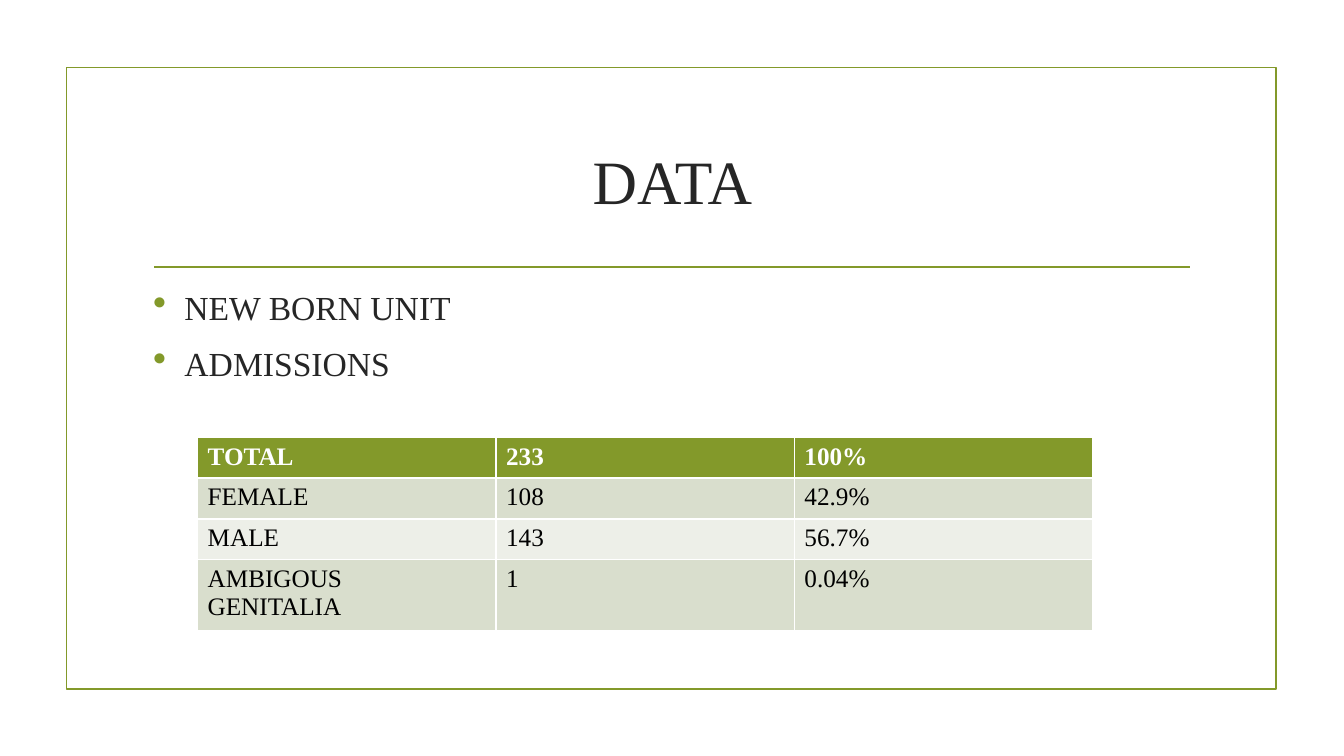
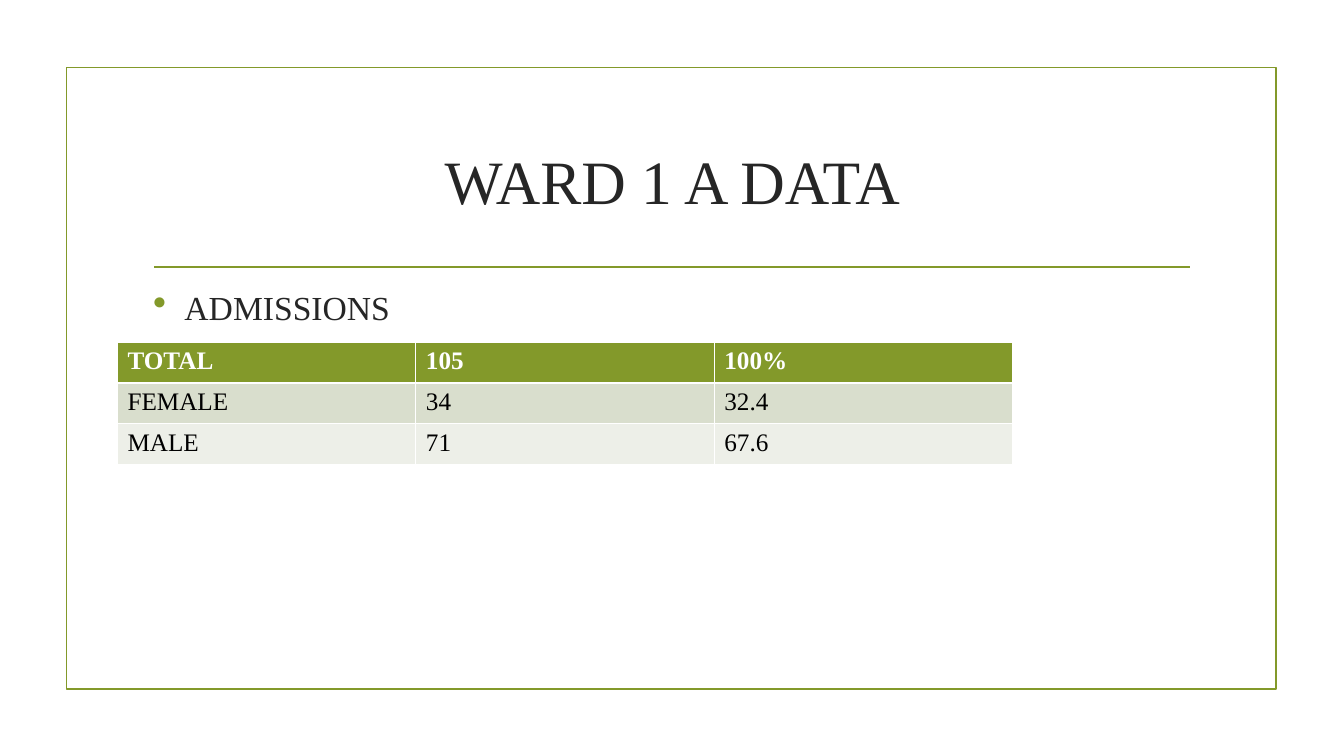
from lxml import etree
from pptx import Presentation
from pptx.dml.color import RGBColor
from pptx.enum import shapes, text
from pptx.oxml import ns
from pptx.util import Cm, Pt

# Shared style
FONT = "Times New Roman"
GREEN, INK, WHITE, BLACK = "83992A", "262626", "FFFFFF", "000000"
BANDS = ("D9DECD", "EDEFE8")
TITLE_ONLY = 5
COLUMN_WIDTH = 7.52
ROW_HEIGHT = 1.03


def color(hex_value):
    return RGBColor.from_string(hex_value)


def box(left, top, width, height):
    return Cm(left), Cm(top), Cm(width), Cm(height)


def set_font(paragraph, size, hex_value, bold=False):
    font = paragraph.font
    font.name, font.size, font.bold = FONT, Pt(size), bold
    font.color.rgb = color(hex_value)


def set_line(shape):
    shape.line.color.rgb = color(GREEN)
    shape.line.width = Pt(1.25)


def add_sub(parent, tag, **attributes):
    return etree.SubElement(parent, ns.qn(tag), attributes)


# Frame, rule and title common to every slide
def add_base_slide(presentation, title):
    slide = presentation.slides.add_slide(presentation.slide_layouts[TITLE_ONLY])

    frame = slide.shapes.add_shape(shapes.MSO_SHAPE.RECTANGLE, *box(1.68, 1.7, 30.48, 15.67))
    frame.shadow.inherit = False
    frame.fill.background()
    set_line(frame)

    rule = slide.shapes.add_connector(
        shapes.MSO_CONNECTOR.STRAIGHT, Cm(3.89), Cm(6.73), Cm(30), Cm(6.73))
    set_line(rule)
    add_sub(rule._element.spPr, "a:effectLst")

    heading = slide.shapes.title
    heading.left, heading.top, heading.width, heading.height = box(3.61, 2.72, 26.67, 3.63)
    heading.text_frame.text = title
    heading.text_frame.vertical_anchor = text.MSO_ANCHOR.MIDDLE
    paragraph = heading.text_frame.paragraphs[0]
    paragraph.alignment = text.PP_ALIGN.CENTER
    set_font(paragraph, 44, INK)
    return slide


def add_bullets(slide, items):
    frame = slide.shapes.add_textbox(*box(3.61, 7.11, 26.67, 9.22)).text_frame
    frame.word_wrap = True
    for index, item in enumerate(items):
        paragraph = frame.add_paragraph() if index else frame.paragraphs[0]
        paragraph.text = item
        properties = paragraph._p.get_or_add_pPr()
        properties.set("marL", str(Cm(0.79)))
        properties.set("indent", str(-Cm(0.79)))
        add_sub(add_sub(properties, "a:buClr"), "a:srgbClr", val=GREEN)
        add_sub(properties, "a:buSzPct", val="115000")
        add_sub(properties, "a:buChar", char="•")
        paragraph.space_before = Pt(5 if index else 0)
        paragraph.space_after = Pt(6)
        set_font(paragraph, 24, INK)


# White cell borders come from the default table style
def add_data_table(slide, left, top, rows, heights):
    column_count = len(rows[0])
    table = slide.shapes.add_table(
        len(rows), column_count,
        *box(left, top, COLUMN_WIDTH * column_count, sum(heights))).table
    for column in table.columns:
        column.width = Cm(COLUMN_WIDTH)
    for index, (values, height) in enumerate(zip(rows, heights)):
        header = index == 0
        table.rows[index].height = Cm(height)
        for cell, value in zip(table.rows[index].cells, values):
            cell.text = value
            cell.fill.solid()
            cell.fill.fore_color.rgb = color(GREEN if header else BANDS[(index - 1) % 2])
            set_font(cell.text_frame.paragraphs[0], 18, WHITE if header else BLACK, header)


def main():
    presentation = Presentation()
    presentation.slide_width, presentation.slide_height = Cm(33.87), Cm(19.05)

    # Newborn unit
    slide = add_base_slide(presentation, "DATA")
    add_bullets(slide, ["NEW BORN UNIT", "ADMISSIONS"])
    add_data_table(slide, 4.98, 11.03, [
        ("TOTAL", "233", "100%"),
        ("FEMALE", "108", "42.9%"),
        ("MALE", "143", "56.7%"),
        ("AMBIGOUS  GENITALIA", "1", "0.04%"),
    ], [0.95, ROW_HEIGHT, ROW_HEIGHT, 1.63])

    # Ward 1 A
    slide = add_base_slide(presentation, "WARD 1 A DATA")
    add_bullets(slide, ["ADMISSIONS"])
    add_data_table(slide, 2.96, 8.62, [
        ("TOTAL", "105", "100%"),
        ("FEMALE", "34", "32.4"),
        ("MALE", "71", "67.6"),
    ], [ROW_HEIGHT] * 3)

    presentation.save("out.pptx")


if __name__ == "__main__":
    main()
